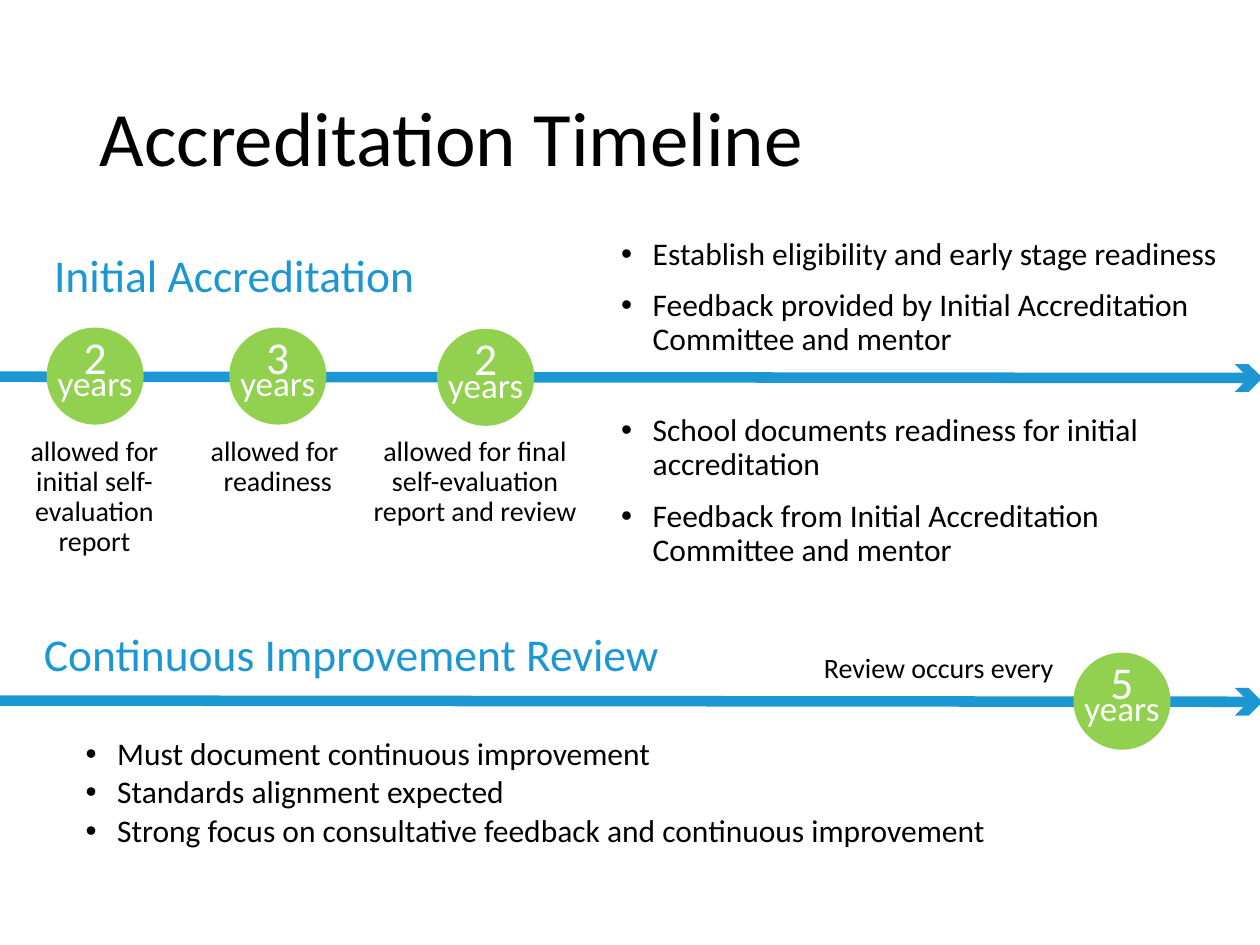
"""Build the accreditation timeline slide."""
from lxml import etree
from pptx import Presentation
from pptx.dml.color import RGBColor
from pptx.enum.shapes import MSO_CONNECTOR, MSO_SHAPE
from pptx.enum.text import MSO_ANCHOR, MSO_AUTO_SIZE, PP_ALIGN
from pptx.oxml.ns import qn
from pptx.util import Inches, Pt

LINE = MSO_CONNECTOR.STRAIGHT
OVAL, CHEVRON = MSO_SHAPE.OVAL, MSO_SHAPE.CHEVRON
TOP, MIDDLE = MSO_ANCHOR.TOP, MSO_ANCHOR.MIDDLE
LEFT, CENTER, RIGHT = PP_ALIGN.LEFT, PP_ALIGN.CENTER, PP_ALIGN.RIGHT
NO_FIT = MSO_AUTO_SIZE.NONE
COMPARISON = 4
FONT = "Calibri"
COLORS = {"text": "000000", "blue": "1C97D4", "green": "92D050", "white": "FFFFFF"}
CIRCLE = 0.77
CHEVRON_SIZE = 0.22


def color(name):
    return RGBColor.from_string(COLORS[name])


def style_run(r, size, name):
    r.font.name = FONT
    r.font.size = Pt(size)
    r.font.bold = False
    r.font.color.rgb = color(name)


def style_paragraph(p, size, name, align=LEFT, spacing=0.9):
    p.alignment = align
    p.line_spacing = spacing
    p.space_before = Pt(0)
    for r in p.runs:
        style_run(r, size, name)


def place(sp, x, y, w, h):
    sp.left, sp.top, sp.width, sp.height = map(Inches, (x, y, w, h))


def set_frame(tf, anchor=TOP):
    tf.word_wrap = True
    tf.auto_size = NO_FIT
    tf.vertical_anchor = anchor


def add_bullet(p):
    pPr = p._p.get_or_add_pPr()
    pPr.set("marL", str(Inches(0.25)))
    pPr.set("indent", str(-Inches(0.25)))
    etree.SubElement(pPr, qn("a:buFont")).set("typeface", "Arial")
    etree.SubElement(pPr, qn("a:buChar")).set("char", "•")


def fill_title(s, text):
    sp = s.shapes.title
    place(sp, 0.69, 0.4, 8.62, 1.45)
    set_frame(sp.text_frame, MIDDLE)
    sp.text_frame.text = text
    style_paragraph(sp.text_frame.paragraphs[0], 44, "text")


def fill_list(sp, box, items, before=0, after=0):
    place(sp, *box)
    tf = sp.text_frame
    set_frame(tf)
    tf.text = "\n".join(items)
    for i, p in enumerate(tf.paragraphs):
        add_bullet(p)
        style_paragraph(p, 18, "text")
        p.space_before = Pt(before if i else 0)
        p.space_after = Pt(after)


def add_text(s, box, text, size=16, name="text", align=CENTER, spacing=0.9):
    sp = s.shapes.add_textbox(*map(Inches, box))
    tf = sp.text_frame
    set_frame(tf)
    tf.text = text
    style_paragraph(tf.paragraphs[0], size, name, align, spacing)
    return tf


def add_shape(s, kind, x, y, size, name):
    sp = s.shapes.add_shape(kind, *map(Inches, (x, y, size, size)))
    sp.shadow.inherit = False
    sp.fill.solid()
    sp.fill.fore_color.rgb = color(name)
    sp.line.fill.background()


def add_arrow(s, y):
    line = s.shapes.add_connector(LINE, *map(Inches, (0, y, 9.91, y + 0.01)))
    line.line.color.rgb = color("blue")
    line.line.width = Pt(6)
    etree.SubElement(line._element.spPr, qn("a:effectLst"))
    add_shape(s, CHEVRON, 9.8, y - 0.1, CHEVRON_SIZE, "blue")


def add_milestone(s, x, y, years):
    add_shape(s, OVAL, x, y, CIRCLE, "green")
    box = (x - 0.2, y + 0.2, 1.17, 0.42)
    tf = add_text(s, box, f"{years}\vyears", 26, "white", spacing=0.5)
    tf.margin_top = tf.margin_bottom = 0
    tf.paragraphs[0].runs[1].font.size = Pt(20)


def main():
    prs = Presentation()
    prs.slide_width, prs.slide_height = Inches(10), Inches(7.5)
    s = prs.slides.add_slide(prs.slide_layouts[COMPARISON])
    bodies = {ph.placeholder_format.idx: ph for ph in s.placeholders}
    unused = bodies[1]._element
    unused.getparent().remove(unused)

    fill_title(s, "Accreditation Timeline")
    fill_list(bodies[2], (4.83, 1.84, 5.32, 1.54), [
        "Establish eligibility and early stage readiness",
        "Feedback provided by Initial Accreditation Committee and mentor",
    ], before=10)
    fill_list(bodies[3], (4.83, 3.24, 4.97, 1.54), [
        "School documents readiness for initial accreditation",
        "Feedback from Initial Accreditation Committee and mentor",
    ], before=10)
    fill_list(bodies[4], (0.58, 5.81, 9.1, 1.94), [
        "Must document continuous improvement",
        "Standards alignment expected",
        "Strong focus on consultative feedback and continuous improvement",
    ], after=2.5)

    add_text(s, (-0.32, 1.96, 4.36, 1.3), "Initial Accreditation", 26, "blue")
    add_text(s, (-0.8, 4.97, 7.18, 1.3), "Continuous Improvement Review", 26, "blue")
    for y in (2.99, 5.56):
        add_arrow(s, y)
    for x, y, years in ((0.37, 2.6, 2), (1.82, 2.6, 3), (3.47, 2.61, 2), (8.52, 5.18, 5)):
        add_milestone(s, x, y, years)

    for x, w, h, text in (
        (-0.07, 1.64, 0.93, "allowed for initial self-evaluation report"),
        (0.99, 2.43, 0.51, "allowed for \vreadiness"),
        (2.86, 1.82, 1.04, "allowed for final self-evaluation report and review"),
    ):
        add_text(s, (x, 3.42, w, h), text)
    add_text(s, (6.11, 5.14, 2.4, 0.75), "Review occurs every ", align=RIGHT)
    prs.save("out.pptx")


if __name__ == "__main__":
    main()
